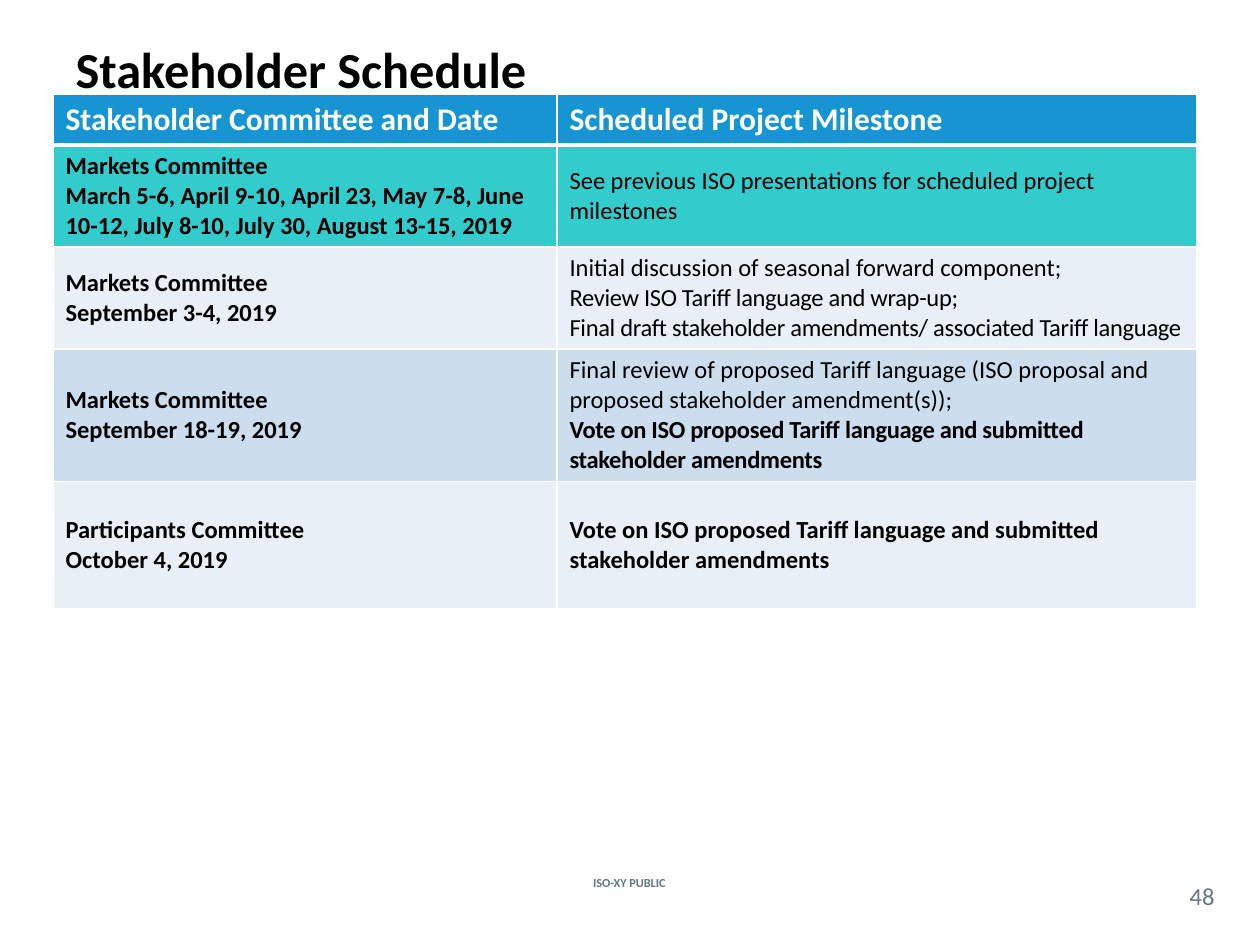
from pptx import Presentation
from pptx.dml.color import RGBColor
from pptx.enum.text import MSO_ANCHOR as Anchor, PP_ALIGN as Align
from pptx.oxml import parse_xml
from pptx.oxml.ns import nsdecls
from pptx.util import Inches, Pt

FONT = "Calibri"
BLACK = RGBColor(0x00, 0x00, 0x00)
WHITE = RGBColor(0xFF, 0xFF, 0xFF)
GRAY = RGBColor(0x62, 0x77, 0x7F)
BLUE = RGBColor(0x17, 0x95, 0xD2)
TEAL = RGBColor(0x33, 0xCC, 0xCC)
PALE = RGBColor(0xE8, 0xEF, 0xF7)
MIST = RGBColor(0xCC, 0xDD, 0xEE)

COLS = (4, 5.08)
TIGHT = -20  # letter spacing in hundredths of a point
VOTE = "Vote on ISO proposed Tariff language and submitted stakeholder amendments"

# Each row: height, fill, left lines, right lines as (text, bold, spacing)
ROWS = [
    (0.4, BLUE, ["Stakeholder Committee and Date"],
     [("Scheduled Project Milestone", True, 0)]),
    (0.81, TEAL,
     ["Markets Committee",
      "March 5-6, April 9-10, April 23, May 7-8, June 10-12, "
      "July 8-10, July 30, August 13-15, 2019"],
     [("See previous ISO presentations for scheduled project milestones", False, 0)]),
    (0.81, PALE, ["Markets Committee", "September 3-4, 2019"],
     [("Initial discussion of seasonal forward component;", False, 0),
      ("Review ISO Tariff language and wrap-up;", False, TIGHT),
      ("Final draft stakeholder amendments/ associated Tariff language", False, TIGHT)]),
    (1.05, MIST, ["Markets Committee", "September 18-19, 2019"],
     [("Final review of proposed Tariff language (ISO proposal and "
       "proposed stakeholder amendment(s));", False, 0),
      (VOTE, True, TIGHT)]),
    (1.01, PALE, ["Participants Committee", "October 4, 2019"],
     [(VOTE, True, 0)]),
]


def add_run(para, text, size, color, bold=False, gap=0):
    run = para.add_run()
    run.text = text
    font = run.font
    font.name, font.size, font.bold = FONT, Pt(size), bold
    font.color.rgb = color
    if gap:
        run._r.get_or_add_rPr().set("spc", str(gap))


def set_edges(cell, widths):
    """Draw white cell borders; widths are points for left, right, top, bottom."""
    props = cell._tc.get_or_add_tcPr()
    for i, (side, width) in enumerate(zip("LRTB", widths)):
        props.insert(i, parse_xml(
            f'<a:ln{side} {nsdecls("a")} w="{Pt(width)}"><a:solidFill>'
            f'<a:srgbClr val="{WHITE}"/></a:solidFill></a:ln{side}>'))


def fill_cell(cell, lines, fill, size, color, edges):
    cell.fill.solid()
    cell.fill.fore_color.rgb = fill
    cell.vertical_anchor = Anchor.MIDDLE
    set_edges(cell, edges)
    frame = cell.text_frame
    for i, (text, bold, gap) in enumerate(lines):
        para = frame.add_paragraph() if i else frame.paragraphs[0]
        add_run(para, text, size, color, bold, gap)


def add_title(slide, left, top, width, height):
    title = slide.shapes.title
    title.left, title.top = Inches(left), Inches(top)
    title.width, title.height = Inches(width), Inches(height)
    frame = title.text_frame
    frame.vertical_anchor = Anchor.MIDDLE
    para = frame.paragraphs[0]
    para.alignment = Align.LEFT
    add_run(para, "Stakeholder Schedule", 28.8, BLACK, True)


def add_schedule(slide, left, top):
    height = sum(row[0] for row in ROWS)
    table = slide.shapes.add_table(
        len(ROWS), len(COLS), Inches(left), Inches(top),
        Inches(sum(COLS)), Inches(height)).table
    for col, width in zip(table.columns, COLS):
        col.width = Inches(width)
    for r, (tall, fill, dates, goals) in enumerate(ROWS):
        table.rows[r].height = Inches(tall)
        size, color = (14, BLACK) if r else (18, WHITE)
        edges = (1, 1, 1 if r != 1 else 3, 1 if r else 3)
        names = [(text, True, 0) for text in dates]
        for c, lines in enumerate((names, goals)):
            fill_cell(table.cell(r, c), lines, fill, size, color, edges)


def add_label(slide, box, text, size, bold=False):
    frame = slide.shapes.add_textbox(*map(Inches, box)).text_frame
    frame.word_wrap = True
    frame.vertical_anchor = Anchor.MIDDLE
    frame.margin_left = frame.margin_right = 0
    frame.margin_top = frame.margin_bottom = 0
    para = frame.paragraphs[0]
    para.alignment = Align.CENTER
    add_run(para, text, size, GRAY, bold)


def main():
    deck = Presentation()
    deck.slide_width, deck.slide_height = Inches(10), Inches(7.5)
    slide = deck.slides.add_slide(deck.slide_layouts[5])
    add_label(slide, (4.26, 6.87, 1.47, 0.27), "ISO-XY PUBLIC", 7, True)
    add_title(slide, 0.5, 0.25, 9, 0.58)
    add_label(slide, (9.33, 6.96, 0.42, 0.29), "48", 14)
    add_schedule(slide, 0.42, 0.75)
    deck.save("out.pptx")


if __name__ == "__main__":
    main()
